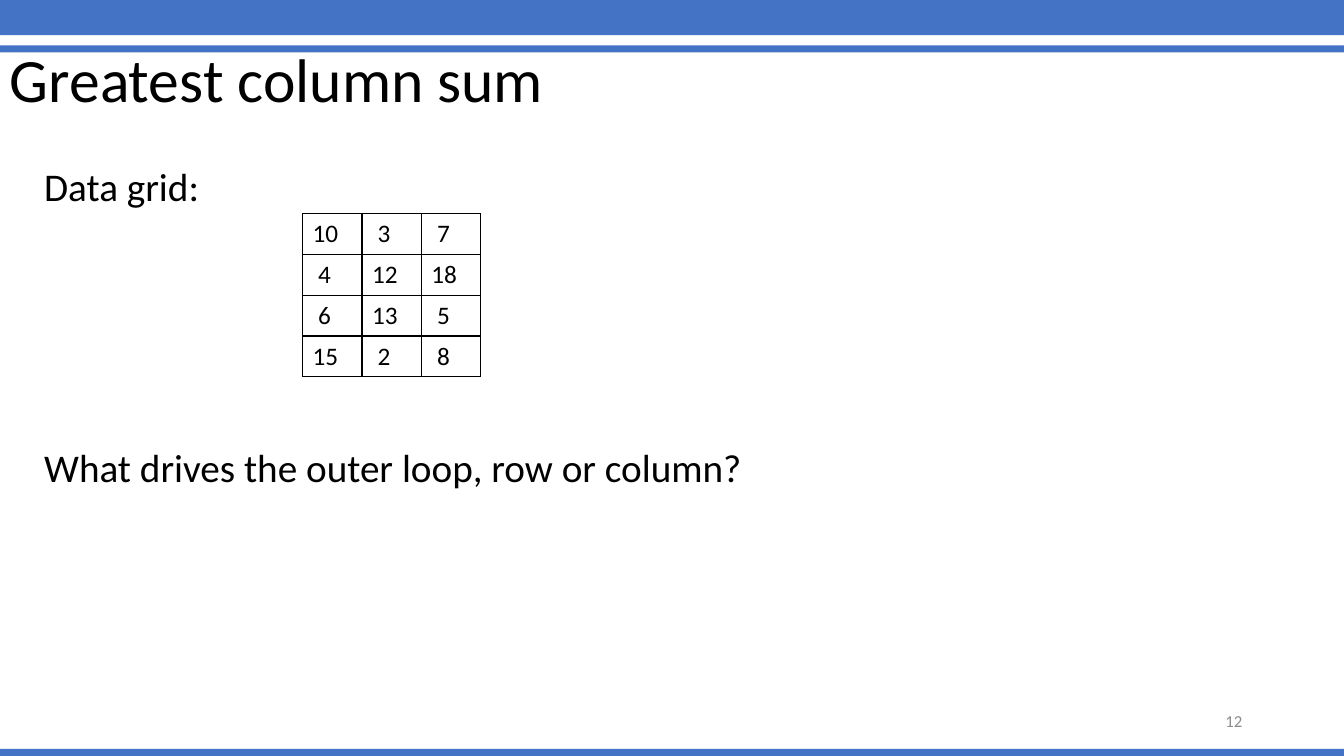
import dataclasses

import lxml.etree
import pptx
import pptx.dml.color
import pptx.enum.shapes
import pptx.enum.text
import pptx.oxml.ns
import pptx.util


@dataclasses.dataclass(frozen=True)
class Theme:
    """Colours, font and type sizes of the slide."""

    accent: str = "4472C4"
    ink: str = "000000"
    muted: str = "8C8C8C"
    font: str = "Calibri"
    title_size: int = 44
    body_size: int = 28
    cell_size: int = 18
    number_size: int = 12
    line_spacing: float = 0.9
    border_width: int = 1


THEME = Theme()
SLIDE_WIDTH, SLIDE_HEIGHT = 13.33, 7.5
GRID = [(10, 3, 7), (4, 12, 18), (6, 13, 5), (15, 2, 8)]
QUESTION_GAP = 171


def colour(code):
    """Return an RGB colour for a hex code."""
    return pptx.dml.color.RGBColor.from_string(code)


def inches(box):
    """Convert left, top, width and height to lengths."""
    return [pptx.util.Inches(length) for length in box]


def add_run(paragraph, words, size, ink=THEME.ink):
    """Add one styled run to a paragraph."""
    run = paragraph.add_run()
    run.text = words
    run.font.name = THEME.font
    run.font.size = pptx.util.Pt(size)
    run.font.color.rgb = colour(ink)


def add_frame(slide, box, anchor):
    """Add a wrapping text box and return its text frame."""
    frame = slide.shapes.add_textbox(*inches(box)).text_frame
    frame.word_wrap = True
    frame.vertical_anchor = anchor
    return frame


def add_band(slide, box):
    """Add one accent band across the slide."""
    band = slide.shapes.add_shape(pptx.enum.shapes.MSO_SHAPE.RECTANGLE, *inches(box))
    band.shadow.inherit = False
    band.fill.solid()
    band.fill.fore_color.rgb = colour(THEME.accent)
    band.line.fill.background()


def add_title(slide, box):
    """Add the slide title, centred vertically in its box."""
    title = add_frame(slide, box, pptx.enum.text.MSO_ANCHOR.MIDDLE).paragraphs[0]
    title.line_spacing = THEME.line_spacing
    add_run(title, "Greatest column sum", THEME.title_size)


def add_body(slide, box):
    """Add the grid's heading and the question that follows the grid."""
    frame = add_frame(slide, box, pptx.enum.text.MSO_ANCHOR.TOP)
    heading, question = frame.paragraphs[0], frame.add_paragraph()
    question.space_before = pptx.util.Pt(QUESTION_GAP)
    for paragraph, words in (
        (heading, "Data grid:"),
        (question, "What drives the outer loop, row or column?"),
    ):
        paragraph.line_spacing = THEME.line_spacing
        add_run(paragraph, words, THEME.body_size)


def add_borders(cell):
    """Draw a thin line on all four sides of a cell."""
    properties = cell._tc.get_or_add_tcPr()
    qn = pptx.oxml.ns.qn
    for position, side in enumerate(("a:lnL", "a:lnR", "a:lnT", "a:lnB")):
        border = lxml.etree.Element(qn(side), w=str(pptx.util.Pt(THEME.border_width)))
        fill = lxml.etree.SubElement(border, qn("a:solidFill"))
        lxml.etree.SubElement(fill, qn("a:srgbClr"), val=THEME.ink)
        properties.insert(position, border)


def add_data_grid(slide, box):
    """Add the table of numbers, with equal rows and columns."""
    rows, columns = len(GRID), len(GRID[0])
    table = slide.shapes.add_table(rows, columns, *inches(box)).table
    table.first_row = False
    table.horz_banding = False
    for row, numbers in enumerate(GRID):
        for column, number in enumerate(numbers):
            cell = table.cell(row, column)
            cell.fill.background()
            add_borders(cell)
            add_run(cell.text_frame.paragraphs[0], f"{number:>2}", THEME.cell_size)


def add_slide_number(slide, box):
    """Add the slide number, right-aligned in its box."""
    number = add_frame(slide, box, pptx.enum.text.MSO_ANCHOR.MIDDLE).paragraphs[0]
    number.alignment = pptx.enum.text.PP_ALIGN.RIGHT
    add_run(number, "12", THEME.number_size, THEME.muted)


def main():
    """Build the slide and save it."""
    deck = pptx.Presentation()
    deck.slide_width = pptx.util.Inches(SLIDE_WIDTH)
    deck.slide_height = pptx.util.Inches(SLIDE_HEIGHT)
    slide = deck.slides.add_slide(deck.slide_layouts[6])
    for top, height in ((0, 0.35), (0.45, 0.07), (SLIDE_HEIGHT - 0.07, 0.07)):
        add_band(slide, (0, top, SLIDE_WIDTH, height))
    add_title(slide, (0, 0.09, 11.5, 1.45))
    add_body(slide, (0.34, 1.61, 12.76, 5.61))
    add_slide_number(slide, (9.42, 6.95, 3, 0.4))
    add_data_grid(slide, (3, 2.12, 1.77, 1.62))
    deck.save("out.pptx")


if __name__ == "__main__":
    main()
